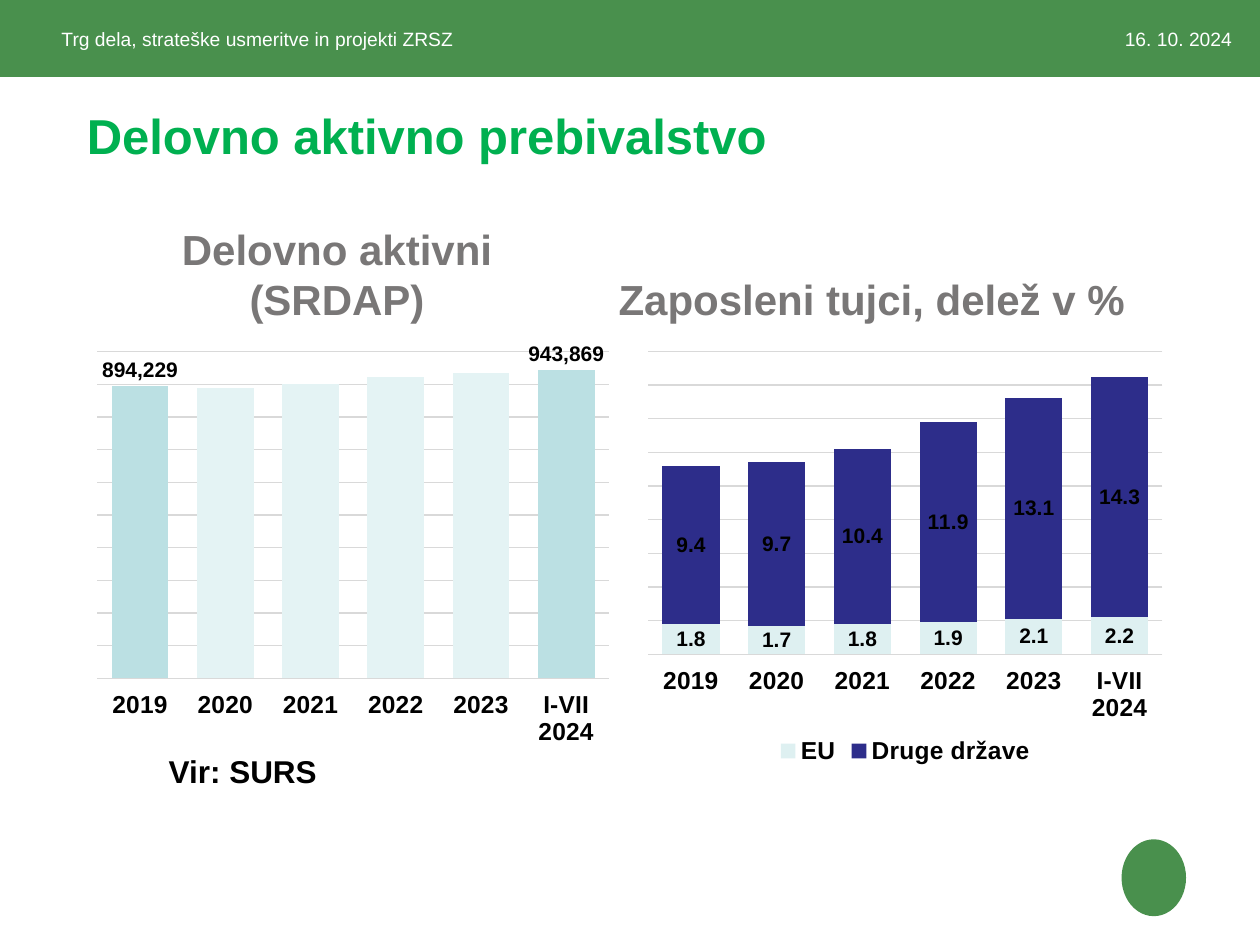
from dataclasses import dataclass, field
from typing import Any

from lxml.etree import SubElement
from pptx import Presentation
from pptx.chart.data import CategoryChartData
from pptx.dml.color import RGBColor
from pptx.enum.chart import XL_CHART_TYPE, XL_LABEL_POSITION, XL_LEGEND_POSITION, XL_TICK_LABEL_POSITION, XL_TICK_MARK
from pptx.enum.shapes import MSO_SHAPE
from pptx.enum.text import MSO_ANCHOR, PP_ALIGN
from pptx.oxml.ns import qn
from pptx.util import Cm, Pt

GREEN = "49904D"
BLACK = "000000"
WHITE = "FFFFFF"
GRID = "D9D9D9"
PALE = "E4F3F4"
PERIODS = ["2019", "2020", "2021", "2022", "2023", "I-VII 2024"]


@dataclass
class Caption:
    text: str
    box: tuple
    size: float
    color: str
    bold: bool = True
    align: Any = PP_ALIGN.LEFT
    anchor: Any = MSO_ANCHOR.TOP


@dataclass
class Column:
    name: str
    values: list
    color: str


@dataclass
class ColumnChart:
    box: tuple
    kind: Any
    columns: list
    number_format: str
    maximum: float
    step: float
    overlap: int
    plot_height: float
    highlights: list = field(default_factory=list)


def rgb(code: str) -> RGBColor:
    return RGBColor.from_string(code)


def apply(target: Any, values: dict) -> None:
    for key, value in values.items():
        setattr(target, key, value)


def style_font(font: Any, size: float, color: str, bold: bool = True) -> None:
    apply(font, {"name": "Arial", "size": Pt(size), "bold": bold})
    font.color.rgb = rgb(color)


def style_line(line: Any) -> None:
    line.color.rgb = rgb(GRID)
    line.width = Pt(0.75)


def paint(fill: Any, color: str) -> None:
    fill.solid()
    fill.fore_color.rgb = rgb(color)


def lengths(box: tuple) -> list:
    return [Cm(value) for value in box]


def draw_block(slide: Any, preset: Any, box: tuple, color: str) -> None:
    block = slide.shapes.add_shape(preset, *lengths(box))
    block.shadow.inherit = False
    paint(block.fill, color)
    block.line.fill.background()


def draw_caption(slide: Any, caption: Caption) -> None:
    frame = slide.shapes.add_textbox(*lengths(caption.box)).text_frame
    apply(frame, {"word_wrap": True, "vertical_anchor": caption.anchor,
                  "margin_left": 0, "margin_right": 0, "margin_top": 0, "margin_bottom": 0})
    paragraph = frame.paragraphs[0]
    paragraph.alignment = caption.align
    run = paragraph.add_run()
    run.text = caption.text
    style_font(run.font, caption.size, caption.color, caption.bold)


def place_plot(chart: Any, height: float) -> None:
    area = chart._chartSpace.chart.plotArea
    for old in area.findall(qn("c:layout")):
        area.remove(old)
    layout = SubElement(area, qn("c:layout"))
    area.insert(0, layout)
    manual = SubElement(layout, qn("c:manualLayout"))
    settings = {"layoutTarget": "inner", "xMode": "edge", "yMode": "edge",
                "x": 0.02, "y": 0.02, "w": 0.96, "h": height}
    for tag, value in settings.items():
        SubElement(manual, qn(f"c:{tag}")).set("val", str(value))


def draw_chart(slide: Any, model: ColumnChart) -> None:
    data = CategoryChartData(number_format=model.number_format)
    data.categories = PERIODS
    for column in model.columns:
        data.add_series(column.name, column.values)
    chart = slide.shapes.add_chart(model.kind, *lengths(model.box), data).chart
    chart.has_title = False
    style_font(chart.font, 14, BLACK)

    periods = chart.category_axis
    apply(periods, {"major_tick_mark": XL_TICK_MARK.NONE, "has_major_gridlines": False,
                    "tick_label_position": XL_TICK_LABEL_POSITION.LOW})
    style_font(periods.tick_labels.font, 14, BLACK)
    style_line(periods.format.line)
    scale = chart.value_axis
    apply(scale, {"minimum_scale": 0, "maximum_scale": model.maximum, "major_unit": model.step,
                  "has_major_gridlines": True, "visible": False})
    style_line(scale.major_gridlines.format.line)

    plot = chart.plots[0]
    apply(plot, {"gap_width": 50, "overlap": model.overlap, "vary_by_categories": False})
    for series, column in zip(plot.series, model.columns):
        paint(series.format.fill, column.color)
        labels = series.data_labels
        apply(labels, {"show_value": not model.highlights, "number_format": model.number_format,
                       "number_format_is_linked": False})
        style_font(labels.font, 12, BLACK)
        if not model.highlights:
            labels.position = XL_LABEL_POSITION.CENTER
            continue
        for index in range(len(PERIODS)):
            point = series.points[index]
            if index in model.highlights:
                style_font(point.data_label.font, 12, BLACK)
                point.data_label.position = XL_LABEL_POSITION.OUTSIDE_END
            else:
                paint(point.format.fill, PALE)

    chart.has_legend = len(model.columns) > 1
    if chart.has_legend:
        apply(chart.legend, {"position": XL_LEGEND_POSITION.BOTTOM, "include_in_layout": False})
        style_font(chart.legend.font, 14, BLACK)
    place_plot(chart, model.plot_height)


CAPTIONS = [
    Caption("Delovno aktivno prebivalstvo", (1.75, 2.13, 18.97, 1.6), 28, "00B050"),
    Caption("Delovno aktivni (SRDAP)", (1.88, 5.59, 9.83, 0.94), 24, "797777",
            align=PP_ALIGN.CENTER, anchor=MSO_ANCHOR.BOTTOM),
    Caption("Zaposleni tujci, delež v %", (12.24, 5.59, 10.67, 0.94), 24, "797777",
            align=PP_ALIGN.CENTER, anchor=MSO_ANCHOR.BOTTOM),
    Caption("Vir: SURS", (3.4, 15.04, 3.58, 1.02), 18, BLACK, anchor=MSO_ANCHOR.MIDDLE),
    Caption("16. 10. 2024", (17.7, 0.56, 7.14, 0.76), 11, WHITE, False, PP_ALIGN.RIGHT),
    Caption("Trg dela, strateške usmeritve in projekti ZRSZ", (1.24, 0.56, 11.46, 0.61), 11, WHITE, False),
]

CHARTS = [
    ColumnChart((12.85, 6.91, 10.8, 8.61), XL_CHART_TYPE.COLUMN_STACKED,
                [Column("EU", [1.8, 1.7, 1.8, 1.9, 2.1, 2.2], "DEF0F1"),
                 Column("Druge države", [9.4, 9.7, 10.4, 11.9, 13.1, 14.3], "2D2D8A")],
                "0.0", 18, 2, 100, 0.71),
    ColumnChart((1.75, 6.91, 10.74, 8.15), XL_CHART_TYPE.COLUMN_CLUSTERED,
                [Column("Delovno aktivni", [894229, 888918, 900262, 921998, 933738, 943869], "BBE0E3")],
                "#,##0", 1000000, 100000, -27, 0.81, [0, 5]),
]


def main() -> None:
    deck = Presentation()
    apply(deck, {"slide_width": Cm(25.4), "slide_height": Cm(19.05)})
    slide = deck.slides.add_slide(deck.slide_layouts[6])
    draw_block(slide, MSO_SHAPE.RECTANGLE, (0, 0, 25.4, 1.55), GREEN)
    draw_block(slide, MSO_SHAPE.OVAL, (22.61, 16.92, 1.3, 1.55), GREEN)
    for model in CHARTS:
        draw_chart(slide, model)
    for caption in CAPTIONS:
        draw_caption(slide, caption)
    deck.save("out.pptx")


if __name__ == "__main__":
    main()
